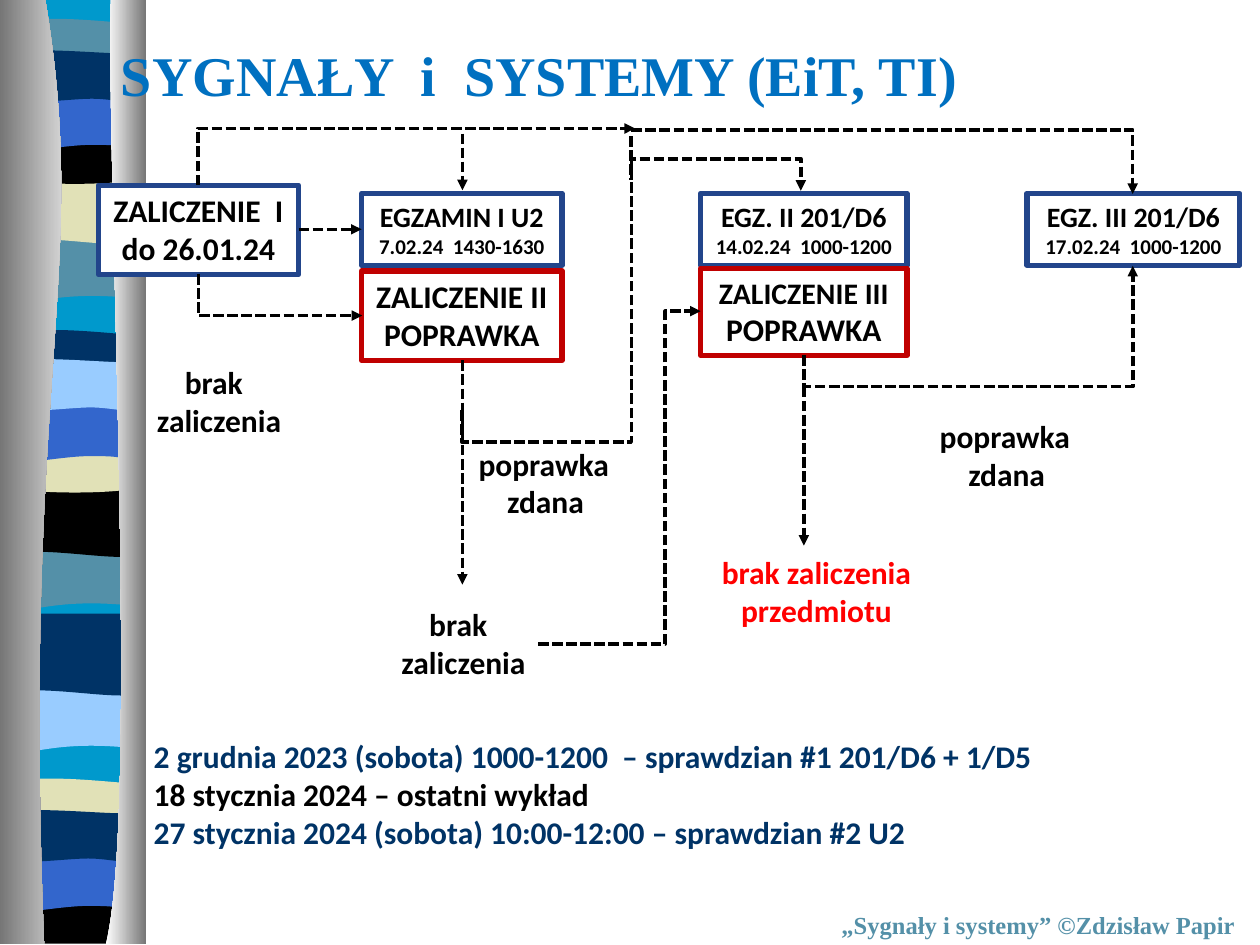
from dataclasses import dataclass
from typing import NamedTuple

from lxml import etree
from pptx import Presentation
from pptx import util as u
from pptx.dml import color as clr
from pptx.enum import dml, shapes, text
from pptx.oxml import ns

COLS, ROWS = 100, 75
WIDE, HIGH = u.Inches(10), u.Inches(7.5)
HUES = {
    "sky": "0099CC", "teal": "5490A8", "sand": "E1E1B7", "black": "000000",
    "blue": "3366CC", "navy": "003366", "ice": "99CCFF", "white": "FFFFFF",
    "gray": "767676", "title": "0070C0", "exam": "22458B", "retake": "C00000",
    "red": "FF0000",
}
SANS, SERIF = "Calibri", "Times New Roman"
LEFT, MID, RIGHT = text.PP_ALIGN.LEFT, text.PP_ALIGN.CENTER, text.PP_ALIGN.RIGHT


class Box(NamedTuple):
    """Left, top, width and height in grid columns and rows."""
    x: float
    y: float
    w: float
    h: float


class Para(NamedTuple):
    words: str
    size: float = 18
    hue: str = "black"
    align: int = MID
    face: str = SANS


class Band(NamedTuple):
    wave: str
    x: float
    y: float
    hue: str


class Wire(NamedTuple):
    """Straight arrow between two grid points."""
    x1: float
    y1: float
    x2: float
    y2: float
    arrow: bool = True


@dataclass
class Bend:
    """Elbow arrow: unrotated frame, turn, flips, number of legs, bend shares."""
    box: Box
    turn: int
    flip: str
    legs: int
    bends: tuple = ()


# Two numbers make a straight edge, six a cubic curve.
WAVES = {
    "swell": [(10.8, 0), (10.8, 5.25), (3.4, 4.35, 1.9, 6.14, 0, 5.25), (0, 0)],
    "ripple": [(10.8, -1), (10.8, 5.27), (9.1, 6.04, 3.4, 4.61, 0, 5.27), (0, -1)],
    "crest": [(10.8, .45), (10.8, 3), (9.1, 3.43, 1.8, 3.43, 0, 3), (0, .45),
              (.7, -.1, 2.4, 0, 4.2, 0), (6, 0, 9.5, .35, 10.8, .45)],
    "bowl": [(10.8, 0), (10.8, 3.33), (9, 3.95, 1.9, 3.95, 0, 3.33), (0, 0),
             (6.6, .5, 8.6, 0, 10.8, 0)],
    "foot": [(10.8, 0), (10.8, 3.7), (0, 3.7), (0, 0), (6.6, .5, 8.6, 0, 10.8, 0)],
    "arch": [(10.8, 0), (10.8, 4.8), (9.1, 4.2, 8.4, 4.2, 6.6, 4.2),
             (4.8, 4.2, 1.6, 4.8, 0, 4.8), (0, 0)],
    "flow": [(10.8, .25), (10.8, 3.84), (10.1, 4.42, 8.5, 3.84, 6.7, 3.84),
             (4.9, 3.84, 1.1, 4.42, 0, 3.84), (0, .25),
             (1.5, -.32, 7.4, .25, 9.2, .25), (11, .25, 10.5, .25, 10.8, .25)],
    "base": [(10.8, 0), (10.8, 74.7), (0, 74.7), (0, 0)],
    "near": [(3.6, 0), (7.2, 21.6, 1.7, 29.6, 3.5, 74.9), (0, 74.9), (0, 0)],
    "far": [(.4, 0), (0, 12.5, 2.7, 64.6, 0, 74.9), (3.2, 74.9), (3.2, 0)],
}
BANDS = [
    Band("base", .6, 0, "sky"),
    Band("swell", .5, 18.5, "teal"), Band("ripple", .6, 13.9, "sand"),
    Band("crest", .6, 1.5, "teal"), Band("bowl", .5, 10.8, "black"),
    Band("arch", .6, 7.3, "blue"), Band("flow", .6, 4, "navy"),
    Band("swell", .4, 42.9, "teal"), Band("ripple", .5, 38.7, "black"),
    Band("crest", .5, 26.2, "navy"), Band("bowl", .5, 35.3, "sand"),
    Band("arch", .5, 32, "blue"), Band("flow", .5, 28.5, "ice"),
    Band("swell", .4, 54.2, "ice"), Band("ripple", .5, 49.7, "navy"),
    Band("crest", .4, 61.8, "sand"), Band("foot", .4, 71.2, "black"),
    Band("arch", .3, 67.7, "blue"), Band("flow", .3, 64.3, "navy"),
]
TITLE = Para("SYGNAŁY  i  SYSTEMY (EiT, TI)", 32, "title", LEFT, SERIF)
FOOTER = Para("„Sygnały i systemy” ©Zdzisław Papir", 14, "teal", LEFT, SERIF)
DATES = [
    Para("2 grudnia 2023 (sobota) 1000-1200  – sprawdzian #1 201/D6 + 1/D5", 18, "navy", LEFT),
    Para("18 stycznia 2024 – ostatni wykład", align=LEFT),
    Para("27 stycznia 2024 (sobota) 10:00-12:00 – sprawdzian #2 U2", 18, "navy", LEFT),
]
STEPS = [
    (Box(7.8, 14.7, 15.9, 7.1), "exam", [Para("ZALICZENIE  I"), Para("do 26.01.24")]),
    (Box(28.7, 15.35, 15.9, 5.7), "exam",
     [Para("EGZAMIN I U2", 16), Para("7.02.24  1430-1630", 12)]),
    (Box(28.7, 21.5, 15.9, 7.1), "retake", [Para("ZALICZENIE II"), Para("POPRAWKA")]),
    (Box(55.6, 15.35, 16.4, 5.7), "exam",
     [Para("EGZ. II 201/D6", 16), Para("14.02.24  1000-1200", 12)]),
    (Box(55.6, 21.3, 16.4, 6.9), "retake", [Para("ZALICZENIE III", 17), Para("POPRAWKA")]),
    (Box(81.5, 15.35, 16.9, 5.7), "exam",
     [Para("EGZ. III 201/D6", 16), Para("17.02.24  1000-1200", 12)]),
]
PASSED = [Para("poprawka", align=LEFT), Para("zdana")]
MISSED = [Para("brak "), Para("zaliczenia", align=RIGHT)]
FAILED = [Para("brak zaliczenia\nprzedmiotu", hue="red")]
NOTES = [
    (Box(37, 34.8, 12.6, 7.2), PASSED), (Box(73.6, 32.6, 12.6, 7.2), PASSED),
    (Box(30.6, 47.5, 12.1, 7.2), MISSED), (Box(11.2, 28.3, 12.1, 7.2), MISSED),
    (Box(56.2, 43.4, 17.2, 7.1), FAILED), (Box(65.8, 71.7, 34.1, 3.4), [FOOTER]),
]
WIRES = [
    Wire(36.7, 28.6, 36.7, 46.4), Wire(63.8, 30.7, 63.8, 43.3),
    Wire(23.7, 18.2, 28.7, 18.2), Wire(50.1, 10.8, 50.1, 14.3, False),
    Wire(36.7, 10.6, 36.7, 15.1),
]
BENDS = [
    Bend(Box(41.4, 10.4, 17.4, 26.9), 90, "HV", 5, (-.146, .5, 1.146)),
    Bend(Box(50.1, 10.3, 39.8, 5.1), 0, "", 2),
    Bend(Box(73.3, 11.6, 7.1, 26.1), 90, "HV", 3, (-.351,)),
    Bend(Box(20.6, 16.9, 3.3, 13), 270, "H", 2),
    Bend(Box(42.7, 24.7, 12.9, 26.4), 0, "V", 3, (.782,)),
    Bend(Box(30.8, -4.9, 4.5, 34.7), 90, "HV", 2),
]


def across(n: float) -> int:
    return round(n * WIDE / COLS)


def down(n: float) -> int:
    return round(n * HIGH / ROWS)


def frame(box: Box) -> tuple:
    return across(box.x), down(box.y), across(box.w), down(box.h)


def rgb(hue: str) -> clr.RGBColor:
    return clr.RGBColor.from_string(HUES[hue])


def add_wave(slide, name: str, x: float, y: float):
    """Draw all points as edges, then join each triple of a curve."""
    segs = WAVES[name]
    pts = [(across(x + s[i]), down(y + s[i + 1])) for s in segs for i in range(0, len(s), 2)]
    pen = slide.shapes.build_freeform(*pts[0])
    pen.add_line_segments(pts[1:])
    shape = pen.convert_to_shape()
    edges = iter(list(shape._element.spPr.iter(ns.qn("a:lnTo"))))
    for seg in segs[1:]:
        first = next(edges)
        if len(seg) == 6:
            first.tag = ns.qn("a:cubicBezTo")
            for edge in (next(edges), next(edges)):
                first.append(edge[0])
                edge.getparent().remove(edge)
    shape.shadow.inherit = False
    shape.line.fill.background()
    return shape


def add_band(slide, band: Band) -> None:
    fill = add_wave(slide, band.wave, band.x, band.y).fill
    fill.solid()
    fill.fore_color.rgb = rgb(band.hue)


def add_rim(slide, name: str, x: float, hues: tuple) -> None:
    fill = add_wave(slide, name, x, 0).fill
    fill.gradient()
    fill.gradient_angle = 0
    for stop, hue in zip(fill.gradient_stops, hues):
        stop.color.rgb = rgb(hue)


def write(shape, paras: list, wrap: bool = False) -> None:
    tf = shape.text_frame
    tf.word_wrap, tf.auto_size = wrap, text.MSO_AUTO_SIZE.NONE
    tf.vertical_anchor = text.MSO_ANCHOR.TOP
    for i, para in enumerate(paras):
        p = tf.add_paragraph() if i else tf.paragraphs[0]
        p.alignment, p.space_before = para.align, u.Pt(0)
        for j, words in enumerate(para.words.split("\n")):
            if j:
                p.add_line_break()
            run = p.add_run()
            run.text = words
            font = run.font
            font.name, font.size, font.bold = para.face, u.Pt(para.size), True
            font.color.rgb = rgb(para.hue)


def place(slide, shape, box: Box, paras: list) -> None:
    """Move a placeholder to the front and strip its bullets."""
    shape.left, shape.top, shape.width, shape.height = frame(box)
    write(shape, paras)
    for p in shape.text_frame.paragraphs:
        props = p._p.get_or_add_pPr()
        props.set("marL", "0")
        props.set("indent", "0")
        etree.SubElement(props, ns.qn("a:buNone"))
    slide.shapes._spTree.append(shape._element)


def add_step(slide, box: Box, hue: str, paras: list) -> None:
    shape = slide.shapes.add_shape(shapes.MSO_SHAPE.RECTANGLE, *frame(box))
    shape.shadow.inherit = False
    shape.fill.solid()
    shape.fill.fore_color.rgb = rgb("white")
    shape.line.color.rgb, shape.line.width = rgb(hue), u.Pt(3)
    write(shape, paras, True)


def add_wire(slide, wire: Wire, kind=shapes.MSO_CONNECTOR.STRAIGHT):
    link = slide.shapes.add_connector(
        kind, across(wire.x1), down(wire.y1), across(wire.x2), down(wire.y2))
    line = link.line
    line.color.rgb, line.width = rgb("black"), u.Pt(2)
    line.dash_style = dml.MSO_LINE.SQUARE_DOT
    props = link._element.spPr
    if wire.arrow:
        etree.SubElement(props.find(ns.qn("a:ln")), ns.qn("a:tailEnd"), type="triangle")
    etree.SubElement(props, ns.qn("a:effectLst"))
    return link


def add_bend(slide, bend: Bend) -> None:
    x, y, w, h = bend.box
    link = add_wire(slide, Wire(x, y, x + w, y + h), shapes.MSO_CONNECTOR.ELBOW)
    props = link._element.spPr
    xfrm = props.find(ns.qn("a:xfrm"))
    xfrm.set("rot", str(bend.turn * 60000))
    for axis in bend.flip:
        xfrm.set("flip" + axis, "1")
    geom = props.find(ns.qn("a:prstGeom"))
    geom.set("prst", f"bentConnector{bend.legs}")
    for i, share in enumerate(bend.bends, 1):
        etree.SubElement(geom.find(ns.qn("a:avLst")), ns.qn("a:gd"),
                         name=f"adj{i}", fmla=f"val {round(share * 100000)}")


def main() -> None:
    deck = Presentation()
    deck.slide_width, deck.slide_height = WIDE, HIGH
    slide = deck.slides.add_slide(deck.slide_layouts[1])
    for band in BANDS:
        add_band(slide, band)
    add_rim(slide, "near", 0, ("gray", "white"))
    add_rim(slide, "far", 8.4, ("white", "gray"))
    place(slide, slide.shapes.title, Box(8.6, 2.7, 71.2, 6.4), [TITLE])
    for step in STEPS:
        add_step(slide, *step)
    for bend in BENDS:
        add_bend(slide, bend)
    for wire in WIRES:
        add_wire(slide, wire)
    for box, paras in NOTES:
        write(slide.shapes.add_textbox(*frame(box)), paras)
    place(slide, slide.placeholders[1], Box(11.2, 58, 73, 10.1), DATES)
    deck.save("out.pptx")


if __name__ == "__main__":
    main()
